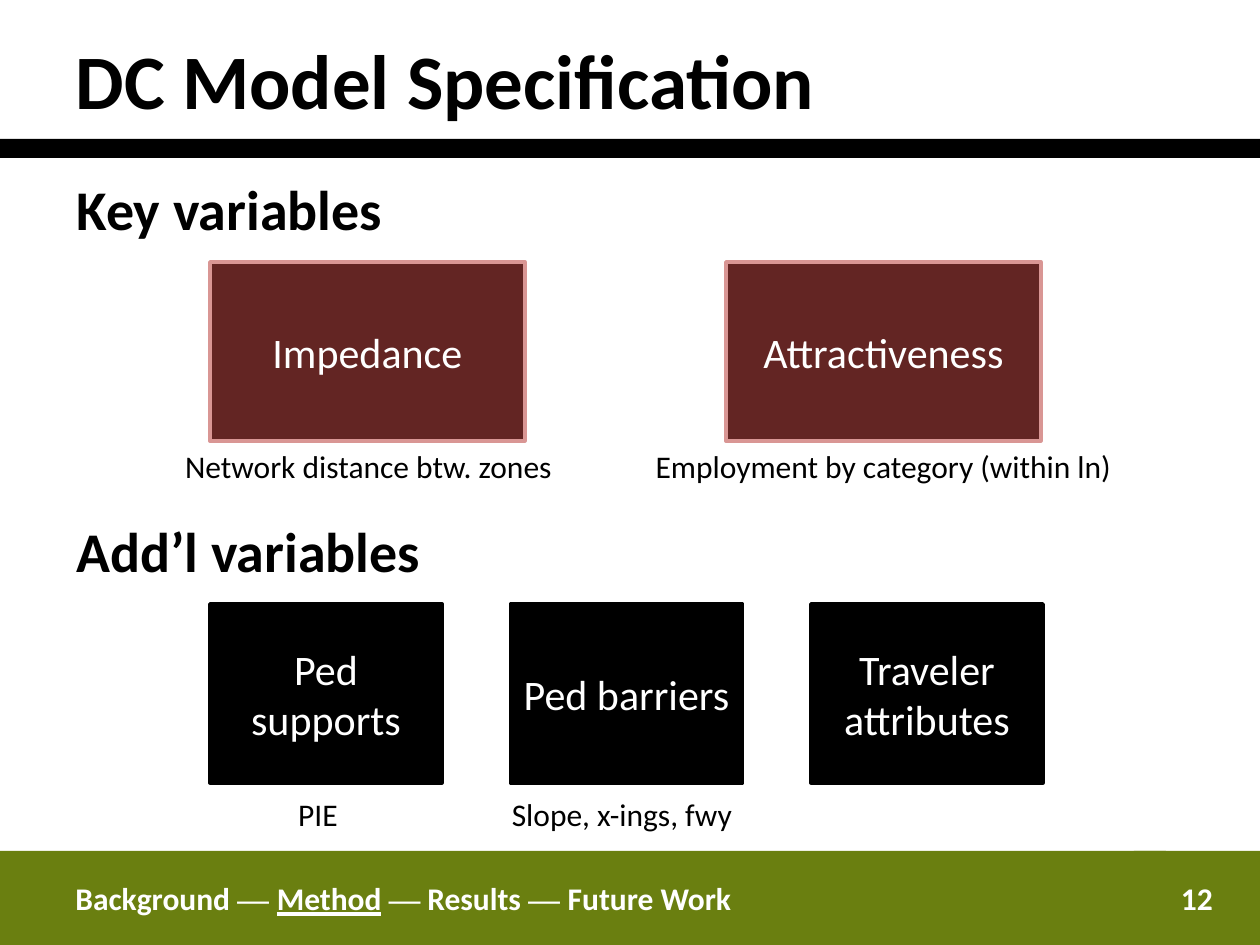
from lxml import etree
from pptx import Presentation
from pptx.dml.color import RGBColor
from pptx.enum.shapes import MSO_SHAPE
from pptx.enum.text import MSO_ANCHOR, MSO_AUTO_SIZE, PP_ALIGN
from pptx.oxml.ns import qn
from pptx.util import Emu, Pt

RECT = MSO_SHAPE.RECTANGLE
TOP, MIDDLE = MSO_ANCHOR.TOP, MSO_ANCHOR.MIDDLE
LEFT, CENTER = PP_ALIGN.LEFT, PP_ALIGN.CENTER
NO_FIT = MSO_AUTO_SIZE.NONE
PX = 914400 / 126

BLACK, WHITE, GREEN = "000000", "FFFFFF", "6A7F10"
MAROON, PINK = "632523", "D99694"
TITLE = {"size": Pt(44), "bold": True}
HEADING = {"size": Pt(32), "bold": True}
LABEL = {"size": Pt(24), "bold": False}
CAPTION = {"size": Pt(18), "bold": False}
FOOTER = {"size": Pt(18), "bold": True}


def px(n):
    return Emu(round(n * PX))


def rgb(value):
    return RGBColor.from_string(value)


def place(sp, box):
    for name, n in zip(("left", "top", "width", "height"), box):
        setattr(sp, name, px(n))


def write(sp, runs, fmt, color=BLACK, align=CENTER, anchor=MIDDLE):
    tf = sp.text_frame
    tf.word_wrap = True
    tf.auto_size = NO_FIT
    tf.vertical_anchor = anchor
    p = tf.paragraphs[0]
    p.alignment = align
    p.space_before = Pt(0)
    for text, extra in runs:
        r = p.add_run()
        r.text = text
        for name, value in {"name": "Calibri", **fmt, **extra}.items():
            setattr(r.font, name, value)
        r.font.color.rgb = rgb(color)


def rect(s, box, fill, line=None):
    sp = s.shapes.add_shape(RECT, *map(px, box))
    sp.shadow.inherit = False
    sp.fill.solid()
    sp.fill.fore_color.rgb = rgb(fill)
    if line:
        sp.line.color.rgb = rgb(line)
        sp.line.width = Pt(2)
    else:
        sp.line.fill.background()
    return sp


def text_box(s, box, text, fmt, align):
    sp = s.shapes.add_textbox(*map(px, box))
    write(sp, [(text, {})], fmt, align=align, anchor=TOP)


def header(s, box):
    x, y, w, h = box
    rect(s, (x, y + h - 19, w, 19), BLACK)
    title = s.shapes.title
    place(title, (x + 63, y, 819, h))
    write(title, [("DC Model Specification", {})], TITLE, align=LEFT)


def footer(s, box):
    x, y, w, h = box
    rect(s, (x, y, 63, h), GREEN)
    number = rect(s, (x + w - 126, y, 126, h), GREEN)
    write(number, [("12", {})], FOOTER, WHITE)
    trail = rect(s, (x + 63, y, w - 157, h), GREEN)
    serif = {"name": "Times New Roman"}
    runs = [("Background ", {}), ("— ", serif), ("Method", {"underline": True}),
            (" ", {}), ("—", serif), (" Results ", {}), ("— ", serif),
            ("Future Work", {})]
    write(trail, runs, FOOTER, WHITE, LEFT)


def key_heading(s, box):
    body = s.placeholders[1]
    place(body, box)
    pPr = body.text_frame.paragraphs[0]._p.get_or_add_pPr()
    pPr.set("marL", "0")
    pPr.set("indent", "0")
    etree.SubElement(pPr, qn("a:buNone"))
    write(body, [("Key variables", {})], HEADING, align=LEFT, anchor=TOP)


def variable_row(s, box, labels, width, fill, line):
    x, y, w, h = box
    pitch = (w - width) / (len(labels) - 1)
    for i, label in enumerate(labels):
        sp = rect(s, (x + i * pitch, y, width, h), fill, line)
        write(sp, [(label, {})], LABEL, WHITE)


def caption_row(s, box, captions, pitch):
    x, y, w, h = box
    for i, caption in enumerate(captions):
        text_box(s, (x + i * pitch, y, w, h), caption, CAPTION, CENTER)


def main():
    prs = Presentation()
    prs.slide_width, prs.slide_height = px(1260), px(945)
    s = prs.slides.add_slide(prs.slide_layouts[1])
    header(s, (0, 0, 1260, 158))
    footer(s, (0, 851, 1260, 94))
    key_heading(s, (64, 168, 347, 95))
    variable_row(s, (210, 262, 831, 179), ["Impedance", "Attractiveness"],
                 315, MAROON, PINK)
    caption_row(s, (115, 441, 507, 50),
                ["Network distance btw. zones", "Employment by category (within ln)"], 515)
    text_box(s, (64, 510, 400, 95), "Add’l variables", HEADING, LEFT)
    variable_row(s, (210, 604, 833, 179),
                 ["Ped supports", "Ped barriers", "Traveler attributes"],
                 232, BLACK, BLACK)
    caption_row(s, (168, 789, 300, 50), ["PIE", "Slope, x-ings, fwy"], 304)
    prs.save("out.pptx")


if __name__ == "__main__":
    main()
